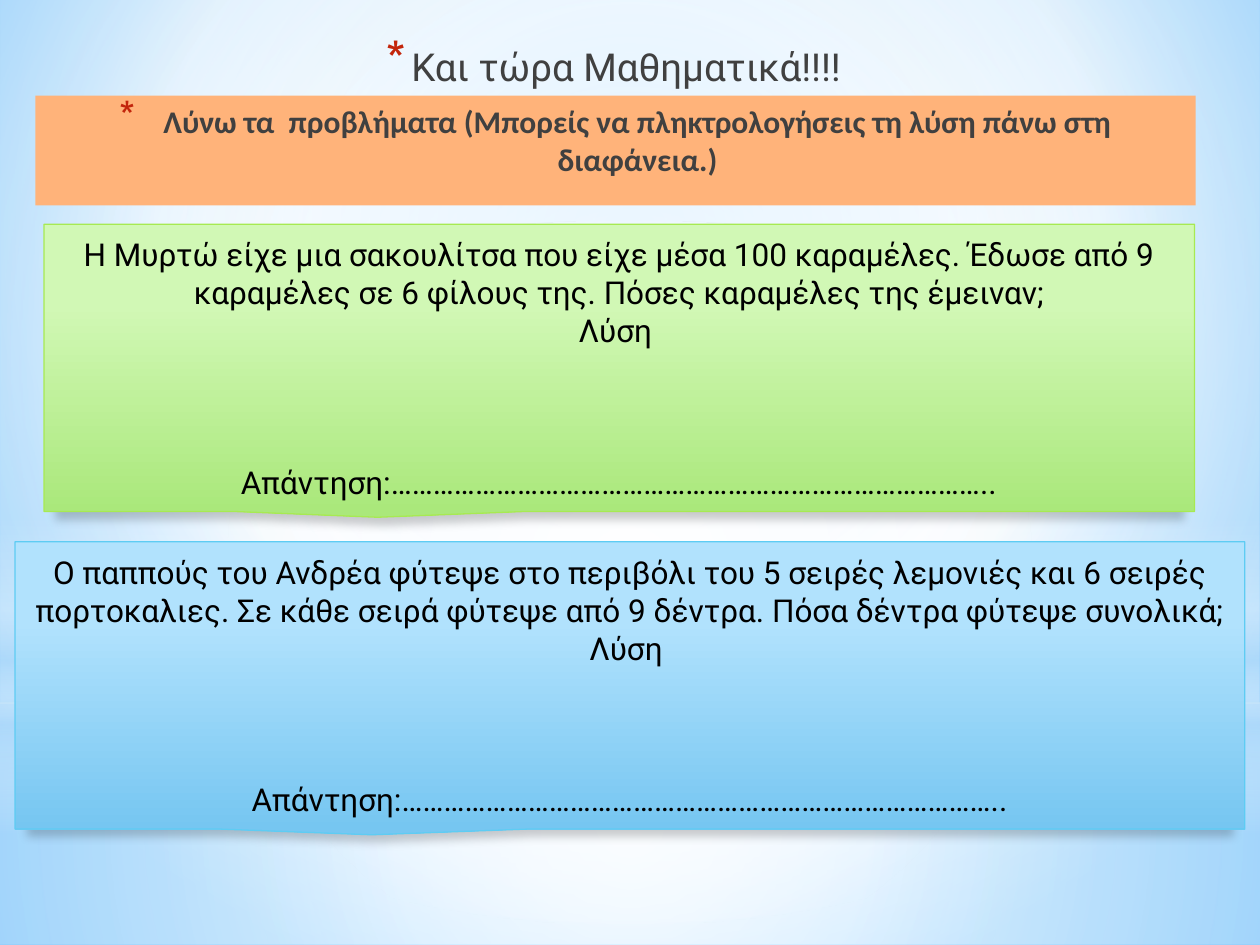
import pptx
import pptx.dml.color
import pptx.enum.shapes
import pptx.enum.text
import pptx.oxml
import pptx.oxml.ns
import pptx.util

Pt = pptx.util.Pt
SHAPES = pptx.enum.shapes.MSO_SHAPE
ANCHOR = pptx.enum.text.MSO_ANCHOR
CENTER = pptx.enum.text.PP_ALIGN.CENTER
AUTO_SIZE = pptx.enum.text.MSO_AUTO_SIZE
NS = pptx.oxml.ns.nsdecls("a")
ANSWER = "Απάντηση:" + "…" * 28 + ".."


def rgb(hex_value):
    return pptx.dml.color.RGBColor.from_string(hex_value)


def apply(target, formats):
    for name, value in formats.items():
        setattr(target, name, value)


def paint_gradient(fill, owner, stops, center=None):
    fill.gradient()
    gradient = owner.find(".//" + pptx.oxml.ns.qn("a:gradFill"))
    stop_xml = "".join(
        f'<a:gs pos="{position * 1000}"><a:srgbClr val="{color}">'
        f'<a:alpha val="{opacity * 1000}"/></a:srgbClr></a:gs>'
        for position, color, opacity in stops
    )
    direction = '<a:lin ang="5400000" scaled="0"/>'
    if center:
        sides = " ".join(f'{side}="{share * 1000}"' for side, share in zip("ltrb", center))
        direction = f'<a:path path="circle"><a:fillToRect {sides}/></a:path>'
    gradient.getparent().replace(gradient, pptx.oxml.parse_xml(
        f'<a:gradFill {NS} rotWithShape="1"><a:gsLst>{stop_xml}</a:gsLst>{direction}</a:gradFill>'
    ))


def write_paragraph(paragraph, text, font, before=0, after=0):
    apply(paragraph, {"alignment": CENTER, "space_before": Pt(before), "space_after": Pt(after)})
    run = paragraph.add_run()
    run.text = text
    color = font["color"]
    apply(run.font, {name: value for name, value in font.items() if name != "color"})
    run.font.color.rgb = rgb(color)


def add_star(paragraph, margin, indent, percent):
    properties = paragraph._p.get_or_add_pPr()
    properties.set("marL", str(Pt(margin)))
    properties.set("indent", str(Pt(indent)))
    for xml in (
        f'<a:buClr {NS}><a:srgbClr val="C3260C"/></a:buClr>',
        f'<a:buSzPct {NS} val="{percent * 1000}"/>',
        f'<a:buChar {NS} char="*"/>',
    ):
        properties.append(pptx.oxml.parse_xml(xml))


def draw_backdrop(slide, width, height):
    paint_gradient(slide.background.fill, slide.element,
                   [(0, "9ED5FF", 100), (60, "FFFFFF", 100), (100, "5BB9FF", 100)],
                   (20, 10, 20, 60))
    middle = (50, 50, 50, 50)
    horizon = 401.76
    veils = [
        (SHAPES.RECTANGLE, horizon, height - horizon, middle,
         [(0, "FFFFFF", 91), (37, "FFFFFF", 76), (100, "B4DCFA", 79)]),
        (SHAPES.RECTANGLE, 0, horizon, middle,
         [(0, "FFFFFF", 89), (48, "FFFFFF", 62), (100, "B4DCFA", 79)]),
        (SHAPES.RECTANGLE, 296.64, 180, None,
         [(0, "FFFFFF", 0), (29, "FFFFFF", 30), (45, "B4DCFA", 40),
          (55, "FFFFFF", 26), (65, "B4DCFA", 60), (100, "FFFFFF", 0)]),
        (SHAPES.OVAL, 126, horizon, middle,
         [(0, "FFFFFF", 100), (56, "FFFFFF", 0)]),
    ]
    for kind, top, depth, center, stops in veils:
        veil = slide.shapes.add_shape(kind, 0, Pt(top), Pt(width), Pt(depth))
        veil.shadow.inherit = False
        veil.line.fill.background()
        paint_gradient(veil.fill, veil.element, stops, center)


def place_instruction(slide, left, top, width, height):
    instruction = slide.shapes.title
    slide.shapes.element.append(instruction.element)
    apply(instruction, {"left": Pt(left), "top": Pt(top), "width": Pt(width), "height": Pt(height)})
    instruction.fill.solid()
    instruction.fill.fore_color.rgb = rgb("FFB37A")
    frame = instruction.text_frame
    apply(frame, {"word_wrap": True, "auto_size": AUTO_SIZE.NONE, "vertical_anchor": ANCHOR.TOP})
    write_paragraph(
        frame.paragraphs[0],
        "Λύνω τα  προβλήματα (Μπορείς να πληκτρολογήσεις τη λύση πάνω στη διαφάνεια.)",
        {"name": "Calibri", "size": Pt(18), "bold": True, "color": "404040"},
    )
    add_star(frame.paragraphs[0], 25.2, -25.2, 128)


def add_heading(slide, left, top, width, height):
    heading = slide.shapes.add_textbox(Pt(left), Pt(top), Pt(width), Pt(height))
    frame = heading.text_frame
    apply(frame, {"word_wrap": True, "auto_size": AUTO_SIZE.NONE, "vertical_anchor": ANCHOR.TOP})
    write_paragraph(frame.paragraphs[0], "Και τώρα Μαθηματικά!!!!",
                    {"name": "Roboto", "size": Pt(22), "color": "404040"}, after=3)
    add_star(frame.paragraphs[0], 18, -14.4, 130)


def add_problem(slide, left, top, width, height, question, colors):
    light, dark, outline = colors
    problem = slide.shapes.add_shape(SHAPES.RECTANGULAR_CALLOUT,
                                     Pt(left), Pt(top), Pt(width), Pt(height))
    problem.adjustments[0] = -0.21
    problem.adjustments[1] = 0.52
    paint_gradient(problem.fill, problem.element, [(28, light, 100), (100, dark, 100)])
    problem.line.color.rgb = rgb(outline)
    problem.line.width = Pt(0.75)
    problem.shadow.inherit = False
    effects = problem.element.spPr.find(pptx.oxml.ns.qn("a:effectLst"))
    effects.append(pptx.oxml.parse_xml(
        f'<a:outerShdw {NS} blurRad="{Pt(5)}" dist="{Pt(4)}" dir="5400000" sx="98000" sy="98000" '
        'algn="b" rotWithShape="0"><a:srgbClr val="000000"><a:alpha val="20000"/></a:srgbClr>'
        '</a:outerShdw>'
    ))
    frame = problem.text_frame
    apply(frame, {"word_wrap": True, "vertical_anchor": ANCHOR.MIDDLE})
    font = {"name": "Roboto", "size": Pt(18), "color": "000000"}
    for index, (text, gap) in enumerate([(question, 0), ("Λύση ", 0), (ANSWER, 65)]):
        paragraph = frame.add_paragraph() if index else frame.paragraphs[0]
        write_paragraph(paragraph, text, font, before=gap)


def main():
    width, height = 720, 540
    deck = pptx.Presentation()
    apply(deck, {"slide_width": Pt(width), "slide_height": Pt(height)})
    slide = deck.slides.add_slide(deck.slide_layouts[5])
    draw_backdrop(slide, width, height)
    place_instruction(slide, 20.16, 54.72, 663.12, 62.64)
    add_heading(slide, 48.24, 20.88, 601.2, 436.32)
    add_problem(
        slide, 25.2, 128.16, 657.36, 164.16,
        "Η Μυρτώ είχε μια σακουλίτσα που είχε μέσα 100 καραμέλες. Έδωσε από 9 "
        "καραμέλες σε 6 φίλους της. Πόσες καραμέλες της έμειναν;",
        ("D1F8B5", "AAE87B", "A7EA52"),
    )
    add_problem(
        slide, 8.64, 309.6, 702.72, 164.16,
        "Ο παππούς του Ανδρέα φύτεψε στο περιβόλι του 5 σειρές λεμονιές και 6 σειρές "
        "πορτοκαλιες. Σε κάθε σειρά φύτεψε από 9 δέντρα. Πόσα δέντρα φύτεψε συνολικά;",
        ("B1E2FD", "76C6F1", "5ECCF3"),
    )
    deck.save("out.pptx")


if __name__ == "__main__":
    main()
